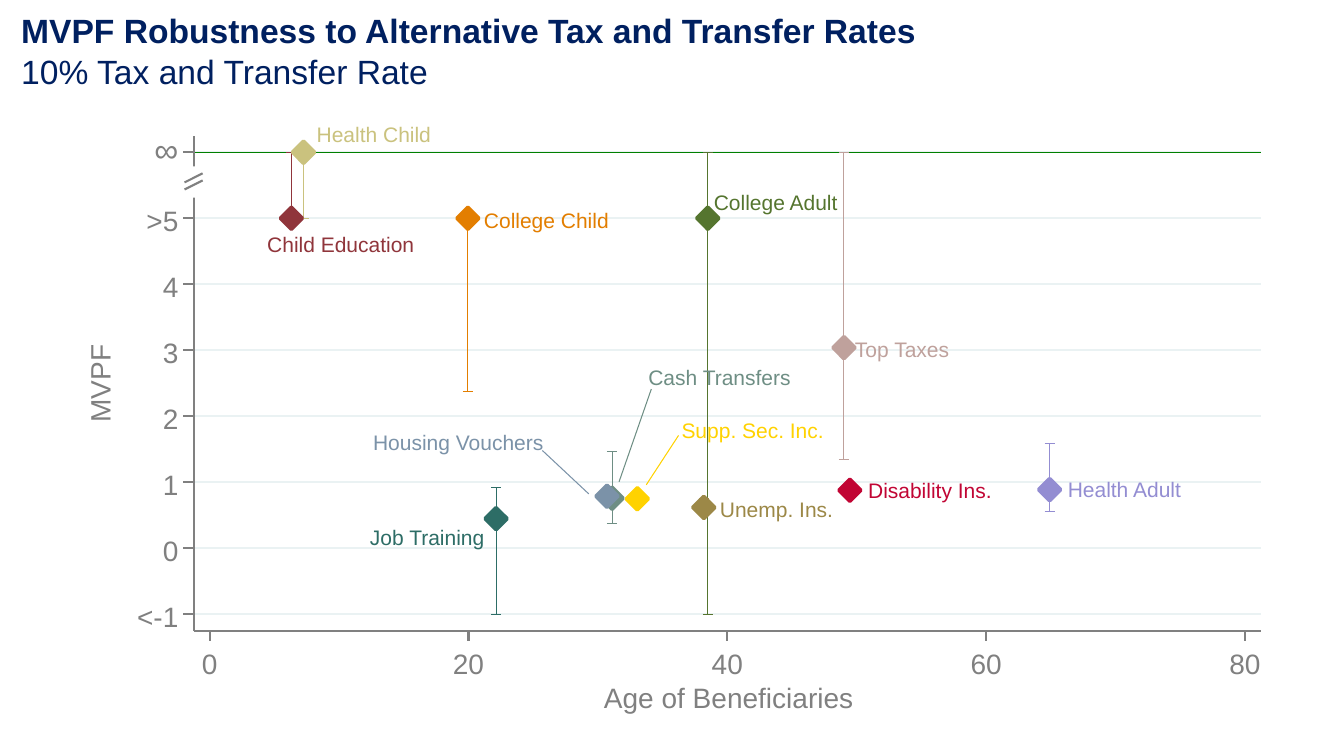
"""Build a slide plotting MVPF by age of beneficiaries under a 10% tax and transfer rate."""
from pptx import Presentation
from pptx.dml.color import RGBColor
from pptx.enum.shapes import MSO_CONNECTOR, MSO_SHAPE
from pptx.enum.text import MSO_ANCHOR, PP_ALIGN
from pptx.oxml.ns import qn
from pptx.util import Inches, Pt
from lxml.etree import SubElement

GRAY, WHITE, NAVY, GRID, GREEN = "808080", "FFFFFF", "002060", "EAF2F3", "008000"
LEFT, RIGHT, TOP, BOTTOM = 1.92, 12.51, 1.35, 6.26
AGE_ZERO, AGE_STEP = 2.08, 2.567 / 20
MVPF_ZERO, MVPF_STEP = 5.44, 0.655
INFINITY_LEVEL = 6
CAP, DIAMOND, TICK = 0.05, 0.22, 0.1

deck = Presentation()
deck.slide_width, deck.slide_height = Inches(13.33), Inches(7.5)
page = deck.slides.add_slide(deck.slide_layouts[5])


def add_line(x1, y1, x2, y2, color, width):
    line = page.shapes.add_connector(
        MSO_CONNECTOR.STRAIGHT, Inches(x1), Inches(y1), Inches(x2), Inches(y2))
    line.line.color.rgb = RGBColor.from_string(color)
    line.line.width = Pt(width)
    SubElement(line._element.spPr, qn("a:effectLst"))


def add_text(text, left, top, width, size, color, align=PP_ALIGN.LEFT):
    box = page.shapes.add_textbox(Inches(left), Inches(top), Inches(width), Inches(size / 50))
    frame = box.text_frame
    frame.word_wrap = True
    frame.margin_left = frame.margin_right = frame.margin_top = frame.margin_bottom = 0
    frame.text = text
    para = frame.paragraphs[0]
    para.alignment = align
    font = para.runs[0].font
    font.name, font.size = "Arial", Pt(size)
    font.color.rgb = RGBColor.from_string(color)
    return box


title = page.shapes.title
title.left, title.top, title.width, title.height = (
    Inches(0.21), Inches(0.1), Inches(11.62), Inches(0.81))
frame = title.text_frame
frame.margin_left = frame.margin_right = frame.margin_top = frame.margin_bottom = 0
frame.vertical_anchor = MSO_ANCHOR.TOP
frame.text = "MVPF Robustness to Alternative Tax and Transfer Rates\n10% Tax and Transfer Rate"
for para, bold in zip(frame.paragraphs, (True, False)):
    para.alignment = PP_ALIGN.LEFT
    font = para.runs[0].font
    font.name, font.size, font.bold = "Arial", Pt(24), bold
    font.color.rgb = RGBColor.from_string(NAVY)

for level in range(-1, INFINITY_LEVEL + 1):
    y = MVPF_ZERO - level * MVPF_STEP
    add_line(LEFT, y, RIGHT, y, GRID, 1.5)
add_line(LEFT, y, RIGHT, y, GREEN, 0.75)

# Columns: colour, age, MVPF, lower bound, upper bound
policies = [
    ("6E8E84", 31.09, 0.76, 0.38, 1.47),
    ("90353B", 6.31, 5, 5, 6),
    ("55752F", 38.49, 5, -1, 6),
    ("E37E00", 19.95, 5, 2.37, 5),
    ("C10534", 49.47, 0.88, 0.84, 0.9),
    ("938DD2", 64.9, 0.89, 0.56, 1.59),
    ("CAC27E", 7.25, 6, 5, 6),
    ("7B92A8", 30.7, 0.79, 0.76, 0.82),
    ("2D6D66", 22.13, 0.45, -1, 0.92),
    ("FFD200", 33.04, 0.75, 0.63, 0.85),
    ("BFA19C", 49.01, 3.04, 1.34, 6),
    ("9C8847", 38.18, 0.62, 0.53, 0.75),
]
for color, age, mvpf, low, high in policies:
    x = AGE_ZERO + age * AGE_STEP
    low_y, high_y = MVPF_ZERO - low * MVPF_STEP, MVPF_ZERO - high * MVPF_STEP
    add_line(x, low_y, x, high_y, color, 0.75)
    for y in (high_y, low_y):
        add_line(x - CAP, y, x + CAP, y, color, 0.75)

for color, age, mvpf, low, high in policies:
    x, y = AGE_ZERO + age * AGE_STEP, MVPF_ZERO - mvpf * MVPF_STEP
    marker = page.shapes.add_shape(
        MSO_SHAPE.DIAMOND, Inches(x - DIAMOND / 2), Inches(y - DIAMOND / 2),
        Inches(DIAMOND), Inches(DIAMOND))
    marker.shadow.inherit = False
    marker.fill.solid()
    marker.fill.fore_color.rgb = marker.line.color.rgb = RGBColor.from_string(color)
    marker.line.width = Pt(2.5)

add_line(LEFT, BOTTOM, LEFT, TOP, GRAY, 1.5)
add_line(LEFT, BOTTOM, RIGHT, BOTTOM, GRAY, 1.5)
for level, label in enumerate(["<-1", "0", "1", "2", "3", "4", ">5", "∞"], start=-1):
    y = MVPF_ZERO - level * MVPF_STEP
    add_line(LEFT, y, LEFT - TICK, y, GRAY, 1.5)
    size, rise = (24, 0.23) if label == "∞" else (20, 0.15)
    add_text(label, 1.17, y - rise, 0.6, size, GRAY, PP_ALIGN.RIGHT)
for age in range(0, 81, 20):
    x = AGE_ZERO + age * AGE_STEP
    add_line(x, BOTTOM, x, BOTTOM + TICK, GRAY, 1.5)
    add_text(str(age), x - 0.3, 6.41, 0.6, 20, GRAY, PP_ALIGN.CENTER)
add_text("Age of Beneficiaries", 5.99, 6.75, 2.62, 20, GRAY)
add_text("MVPF", 0.57, 3.54, 0.9, 20, GRAY).rotation = 270

axis_break = page.shapes.add_shape(
    MSO_SHAPE.RECTANGLE, Inches(1.61), Inches(1.65), Inches(0.58), Inches(0.31))
axis_break.shadow.inherit = False
axis_break.fill.solid()
axis_break.fill.fore_color.rgb = RGBColor.from_string(WHITE)
axis_break.line.fill.background()
for y in (1.81, 1.88):
    add_line(1.83, y, 2.01, y - 0.09, GRAY, 1.5)

for text, left, top, width, color in [
    ("Child Education", 2.65, 2.3, 1.62, "90353B"),
    ("College Adult", 7.08, 1.88, 1.4, "55752F"),
    ("College Child", 4.8, 2.06, 1.4, "E37E00"),
    ("Disability Ins.", 8.61, 4.74, 1.39, "C10534"),
    ("Health Adult", 10.59, 4.73, 1.28, "938DD2"),
    ("Health Child", 3.14, 1.21, 1.28, "CAC27E"),
    ("Job Training", 3.67, 5.2, 1.3, "2D6D66"),
    ("Top Taxes", 8.48, 3.34, 1.12, "BFA19C"),
    ("Unemp. Ins.", 7.14, 4.93, 1.28, "9C8847"),
    ("Housing Vouchers", 3.7, 4.26, 1.88, "7B92A8"),
    ("Cash Transfers", 6.43, 3.62, 1.59, "6E8E84"),
    ("Supp. Sec. Inc.", 6.76, 4.14, 1.57, "FFD200"),
]:
    add_text(text, left, top, width, 15, color)

add_line(5.38, 4.47, 5.84, 4.9, "7B92A8", 0.75)
add_line(6.14, 4.78, 6.46, 3.86, "6E8E84", 0.75)
add_line(6.41, 4.81, 6.73, 4.32, "FFD200", 0.75)

deck.save("out.pptx")
